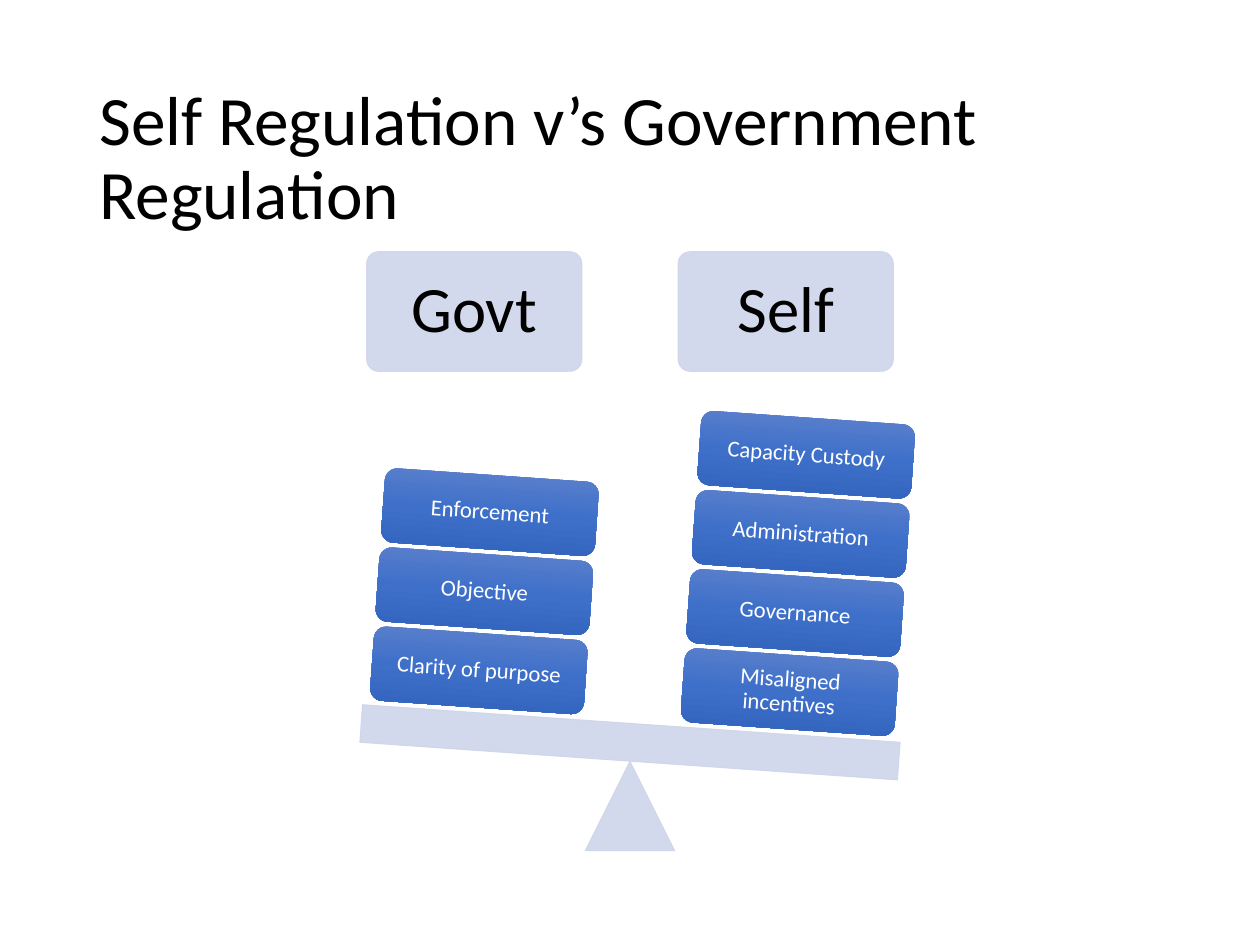
from copy import deepcopy
from dataclasses import dataclass
from math import cos, radians, sin

from lxml import etree
from pptx import Presentation
from pptx.dml.color import RGBColor
from pptx.enum.shapes import MSO_SHAPE
from pptx.enum.text import MSO_ANCHOR, MSO_AUTO_SIZE, PP_ALIGN
from pptx.oxml.ns import qn
from pptx.util import Pt

RECT, ROUND, WEDGE = (MSO_SHAPE.RECTANGLE, MSO_SHAPE.ROUNDED_RECTANGLE,
                      MSO_SHAPE.ISOSCELES_TRIANGLE)
LEFT, CENTER = PP_ALIGN.LEFT, PP_ALIGN.CENTER
MIDDLE = MSO_ANCHOR.MIDDLE
NO_FIT = MSO_AUTO_SIZE.NONE


@dataclass(frozen=True)
class Theme:
    font: str = "Calibri"
    ink: str = "000000"
    light: str = "FFFFFF"
    pale: str = "CFD5EA"
    blues: tuple = ("6183CB", "3E70CA", "3062BB")
    title: float = 39.6
    head: float = 37
    block: float = 13


THEME = Theme()
TILT = 4  # degrees, clockwise
SIDES = [
    ("Govt", ["Clarity of purpose", "Objective", "Enforcement"]),
    ("Self", ["Misaligned incentives", "Governance", "Administration",
              "Capacity Custody"]),
]


def write(shape, text, size, color=THEME.ink, align=CENTER, inset=None):
    frame = shape.text_frame
    frame.word_wrap = True
    frame.auto_size = NO_FIT
    frame.vertical_anchor = MIDDLE
    if inset is not None:
        frame.margin_left = frame.margin_right = Pt(inset)
        frame.margin_top = frame.margin_bottom = Pt(inset)
    para = frame.paragraphs[0]
    para.alignment = align
    para.line_spacing = 0.9
    run = para.add_run()
    run.text = text
    run.font.name = THEME.font
    run.font.size = Pt(size)
    run.font.color.rgb = RGBColor.from_string(color)


def place(group, kind, mid, size, turn=0):
    """Add a shape centred on a point."""
    (x, y), (w, h) = mid, size
    shape = group.shapes.add_shape(kind, Pt(x - w / 2), Pt(y - h / 2),
                                   Pt(w), Pt(h))
    shape.rotation = turn
    shape.shadow.inherit = False
    if kind == ROUND:
        shape.adjustments[0] = 0.1 if turn == 0 else 0.1667
    return shape


def tint(shape):
    """Pale fill and line, both slightly see-through."""
    shape.fill.solid()
    shape.line.width = Pt(0.5)
    for color in (shape.fill.fore_color, shape.line.color):
        color.rgb = RGBColor.from_string(THEME.pale)
    for node in shape._element.spPr.iter(qn("a:srgbClr")):
        etree.SubElement(node, qn("a:alpha")).set("val", "90000")


def shade(shape):
    """Three-stop gradient from top to bottom, without a line."""
    shape.fill.gradient()
    shape.fill.gradient_angle = 270
    stops = shape._element.spPr.find(".//" + qn("a:gsLst"))
    stops.insert(1, deepcopy(stops[0]))
    for stop, color, pos in zip(shape.fill.gradient_stops, THEME.blues,
                                (0, 0.5, 1)):
        stop.color.rgb = RGBColor.from_string(color)
        stop.position = pos
    shape.line.fill.background()


def add_title(slide, box, text):
    title = slide.shapes.title
    title.left, title.top, title.width, title.height = map(Pt, box)
    write(title, text, THEME.title, align=LEFT)


def add_scale(slide, box, sides):
    left, top, width, height = box
    mid, base = left + width / 2, top + height
    head, block, wedge, beam = (123, 68.4), (122.4, 42.5), 51.2, 21.6
    arm, rise, step = 89, 35, 45.3
    pivot = base - wedge - beam / 2
    angle = radians(TILT)
    group = slide.shapes.add_group_shape()

    # Column heads
    for sign, (name, _) in zip((-1, 1), sides):
        card = place(group, ROUND, (mid + sign * arm, top + head[1] / 2), head)
        tint(card)
        write(card, name, THEME.head, inset=12.6)

    # Fulcrum and beam
    tint(place(group, WEDGE, (mid, base - wedge / 2), (wedge, wedge)))
    tint(place(group, RECT, (mid, pivot), (width, beam), TILT))

    # Blocks stacked square to the beam
    for sign, (_, items) in zip((-1, 1), sides):
        for i, item in enumerate(items):
            along, up = sign * arm, rise + i * step
            spot = (mid + along * cos(angle) + up * sin(angle),
                    pivot + along * sin(angle) - up * cos(angle))
            brick = place(group, ROUND, spot, block, TILT)
            shade(brick)
            write(brick, item, THEME.block, THEME.light, inset=5.7)


def main():
    deck = Presentation()
    deck.slide_width, deck.slide_height = Pt(720), Pt(540)
    slide = deck.slides.add_slide(deck.slide_layouts[5])
    add_title(slide, (49.5, 49.7, 621, 83.5),
              "Self Regulation v’s Government Regulation")
    add_scale(slide, (206, 143.8, 308, 342.4), SIDES)
    deck.save("out.pptx")


if __name__ == "__main__":
    main()
